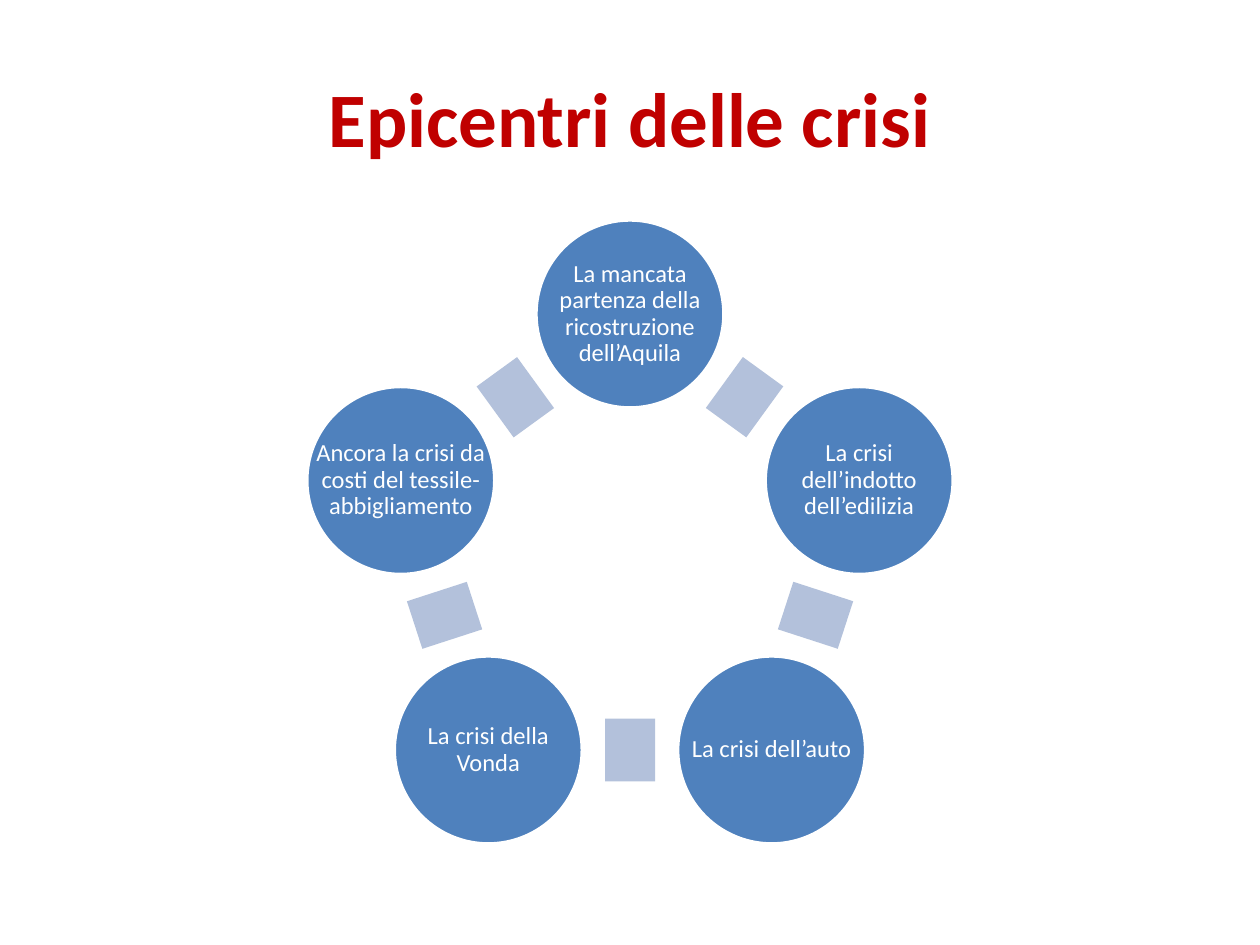
import math

from pptx import Presentation
from pptx import util as u
from pptx.dml.color import RGBColor
from pptx.enum import shapes, text

COLORS = {"title": "C00000", "node": "4F81BD", "link": "B3C1DB", "white": "FFFFFF"}
CRISES = [
    "La mancata partenza della ricostruzione dell’Aquila",
    "La crisi dell’indotto dell’edilizia",
    "La crisi dell’auto",
    "La crisi della Vonda",
    "Ancora la crisi da costi del tessile-abbigliamento",
]
CENTER_X, CENTER_Y, RADIUS = 630, 555, 241
DIAMETER = 188
LINK_WIDTH, LINK_HEIGHT = 50, 63


def px(value):
    return u.Emu(round(value * 914400 / 126))


def color(name):
    return RGBColor.from_string(COLORS[name])


class Canvas:
    font = "Calibri"

    def __init__(self, page):
        self.page = page

    def set_words(self, box, words, size, ink, bold=False):
        frame = box.text_frame
        frame.text = words
        frame.word_wrap = True
        frame.vertical_anchor = text.MSO_ANCHOR.MIDDLE
        para = frame.paragraphs[0]
        para.alignment = text.PP_ALIGN.CENTER
        for span in para.runs:
            span.font.name = self.font
            span.font.size = u.Pt(size)
            span.font.bold = bold
            span.font.color.rgb = color(ink)
        return frame

    def title(self, words, left, top, width, height):
        box = self.page.shapes.title
        box.left, box.top, box.width, box.height = map(px, (left, top, width, height))
        self.set_words(box, words, 44, "title", bold=True)

    def shape(self, kind, x, y, width, height, fill):
        shape = self.page.shapes.add_shape(
            kind, px(x - width / 2), px(y - height / 2), px(width), px(height))
        shape.shadow.inherit = False
        shape.fill.solid()
        shape.fill.fore_color.rgb = color(fill)
        shape.line.fill.background()
        return shape

    def node(self, words, x, y):
        circle = self.shape(shapes.MSO_SHAPE.OVAL, x, y, DIAMETER, DIAMETER, "node")
        circle.line.color.rgb = color("white")
        circle.line.width = u.Pt(2)
        label = self.page.shapes.add_textbox(
            circle.left, circle.top, circle.width, circle.height)
        frame = self.set_words(label, words, 14, "white")
        frame.margin_left = frame.margin_right = u.Inches(0.02)
        frame.margin_top = frame.margin_bottom = u.Inches(0.02)
        frame.paragraphs[0].line_spacing = 0.9

    def link(self, x, y, angle):
        bar = self.shape(
            shapes.MSO_SHAPE.RECTANGLE, x, y, LINK_WIDTH, LINK_HEIGHT, "link")
        bar.rotation = angle


def ring_point(angle, radius):
    turn = math.radians(angle)
    return CENTER_X + radius * math.sin(turn), CENTER_Y - radius * math.cos(turn)


def main():
    deck = Presentation()
    deck.slide_width, deck.slide_height = u.Inches(10), u.Inches(7.5)
    canvas = Canvas(deck.slides.add_slide(deck.slide_layouts[5]))
    canvas.title("Epicentri delle crisi", 63, 38, 1134, 158)

    step = 360 / len(CRISES)
    link_radius = RADIUS * math.cos(math.radians(step / 2))
    for index, crisis in enumerate(CRISES):
        angle = index * step
        canvas.node(crisis, *ring_point(angle, RADIUS))
        middle = angle + step / 2
        canvas.link(*ring_point(middle, link_radius), middle)

    deck.save("out.pptx")


if __name__ == "__main__":
    main()
